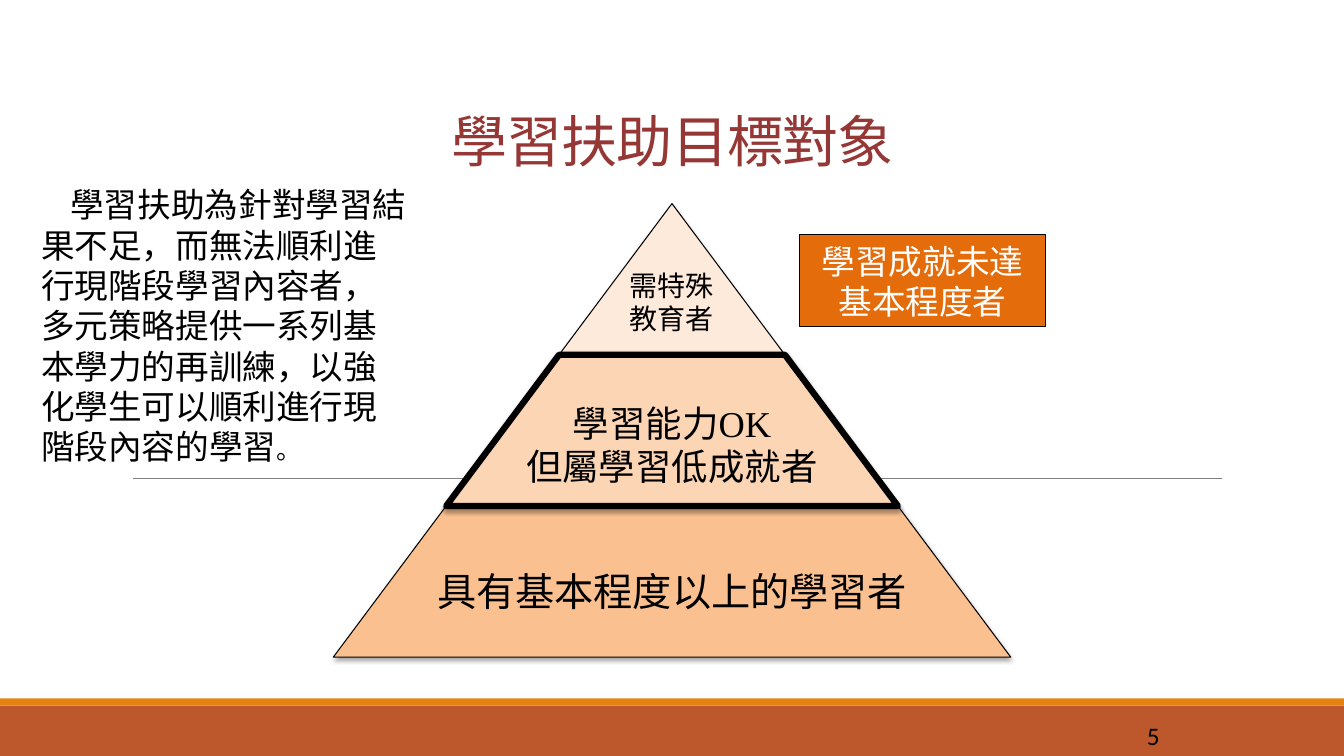
import pptx
import pptx.util
import pptx.dml.color
import pptx.enum.shapes
import pptx.enum.text
import pptx.oxml
import pptx.oxml.ns

Inches, Pt = pptx.util.Inches, pptx.util.Pt
RGB = pptx.dml.color.RGBColor
ALIGN, ANCHOR = pptx.enum.text.PP_ALIGN, pptx.enum.text.MSO_ANCHOR
RECTANGLE = pptx.enum.shapes.MSO_SHAPE.RECTANGLE

BLACK, WHITE, GREY = RGB(0, 0, 0), RGB(255, 255, 255), RGB(0x80, 0x80, 0x80)
RUST, AMBER = RGB(0xBD, 0x58, 0x2C), RGB(0xE4, 0x83, 0x12)
MAROON, ORANGE = RGB(0x95, 0x37, 0x35), RGB(0xE4, 0x6C, 0x0A)
CREAM, PEACH, APRICOT = RGB(0xFD, 0xEA, 0xDA), RGB(0xFC, 0xD5, 0xB5), RGB(0xFA, 0xC0, 0x90)
SANS, SERIF, CJK = "Arial", "Times New Roman", "Noto Sans CJK SC"

WIDTH, HEIGHT = 13.33, 7.5
DRAWING_NS = pptx.oxml.ns.nsdecls("a")

deck = pptx.Presentation()
deck.slide_width, deck.slide_height = Inches(WIDTH), Inches(HEIGHT)
slide = deck.slides.add_slide(deck.slide_layouts[5])
shapes = slide.shapes


def write(shape, lines, size, color, align=ALIGN.CENTER, anchor=ANCHOR.MIDDLE, **margins):
    """Fill a shape with lines, each a list of (text, font) runs."""
    frame = shape.text_frame
    frame_format = {"word_wrap": True, "vertical_anchor": anchor,
                    "auto_size": pptx.enum.text.MSO_AUTO_SIZE.NONE}
    frame_format.update({f"margin_{side}": Inches(gap) for side, gap in margins.items()})
    for name, value in frame_format.items():
        setattr(frame, name, value)
    for number, runs in enumerate(lines):
        paragraph = frame.add_paragraph() if number else frame.paragraphs[0]
        paragraph.alignment = align
        for words, font in runs:
            run = paragraph.add_run()
            run.text = words
            for name, value in {"name": font, "size": Pt(size), "bold": False}.items():
                setattr(run.font, name, value)
            run.font.color.rgb = color


def paint(shape, fill, line_width=0):
    """Give a shape a flat fill and, if asked, a black outline."""
    shape.shadow.inherit = False
    shape.fill.solid()
    shape.fill.fore_color.rgb = fill
    if line_width:
        shape.line.color.rgb = BLACK
        shape.line.width = Pt(line_width)
    else:
        shape.line.fill.background()


# Footer bands
for top, depth, color in [(7, 0.5, RUST), (6.93, 0.07, AMBER)]:
    band = shapes.add_shape(RECTANGLE, 0, Inches(top), Inches(WIDTH), Inches(depth))
    paint(band, color)

# Thin rule behind the pyramid
rule = shapes.add_connector(pptx.enum.shapes.MSO_CONNECTOR.STRAIGHT,
                            Inches(1.32), Inches(4.75), Inches(12.12), Inches(4.75))
rule.line.color.rgb = GREY
rule.line.width = Pt(0.5)
rule._element.spPr.append(pptx.oxml.parse_xml(f"<a:effectLst {DRAWING_NS}/>"))

# Page number
page_number = shapes.add_textbox(Inches(9.27), Inches(7.1), Inches(2.33), Inches(0.4))
write(page_number, [[("5", "Calibri")]], 18, BLACK, ALIGN.RIGHT)

# Title
heading = shapes.title
for name, value in {"left": 2.17, "top": 0.53, "width": 9, "height": 1.25}.items():
    setattr(heading, name, Inches(value))
write(heading, [[("學習扶助目標對象", SERIF)]], 40, MAROON, anchor=ANCHOR.BOTTOM)
heading_line = heading.text_frame.paragraphs[0]
heading_line.line_spacing = 0.85
heading_line.runs[0].font._element.set("spc", "-50")

# Pyramid: equal tiers widening by one step each; the outlined one goes on top
APEX_X, APEX_Y, TIER, STEP = WIDTH / 2, 2.02, 1.5, 1.12
tiers = [
    (0, CREAM, 0.75, 20, 0.45, [[("需特殊", SANS)], [("教育者", SANS)]]),
    (2, APRICOT, 0.75, 28, 0.18, [[("具有基本程度以上的學習者", SANS)]]),
    (1, PEACH, 4.5, 26, 0.28, [[("學習", SANS), ("能力OK", SERIF)], [("但屬學習低成就者", SANS)]]),
]
for level, fill, outline, size, drop, label in tiers:
    upper, lower = APEX_Y + level * TIER, APEX_Y + (level + 1) * TIER
    inner, outer = level * STEP, (level + 1) * STEP
    corners = [(APEX_X - outer, lower), (APEX_X - inner, upper),
               (APEX_X + inner, upper), (APEX_X + outer, lower)]
    if level == 0:
        corners.pop(2)
    points = [(Inches(x), Inches(y)) for x, y in corners]
    builder = shapes.build_freeform(*points[0], scale=1.0)
    builder.add_line_segments(points[1:], close=True)
    tier = builder.convert_to_shape()
    paint(tier, fill, outline)
    tier._element.spPr.find(pptx.oxml.ns.qn("a:effectLst")).append(pptx.oxml.parse_xml(
        f'<a:outerShdw {DRAWING_NS} blurRad="40000" dist="23000" dir="5400000" rotWithShape="0">'
        '<a:srgbClr val="000000"><a:alpha val="35000"/></a:srgbClr></a:outerShdw>'))
    write(tier, label, size, BLACK, left=0.04, right=0.04, top=drop, bottom=0)

# Callout
callout = shapes.add_shape(RECTANGLE, Inches(7.93), Inches(2.33), Inches(2.44), Inches(0.91))
paint(callout, ORANGE, 0.75)
write(callout, [[("學習成就未達", CJK)], [("基本程度者", CJK)]], 24, WHITE)

# Explanation with an indented first line
explanation = shapes.add_textbox(Inches(0.31), Inches(1.78), Inches(3.86), Inches(2.93))
write(explanation, [[("學習扶助為針對學習結果不足，而無法順利進行現階段學習內容者，"
                      "多元策略提供一系列基本學力的再訓練，"
                      "以強化學生可以順利進行現階段內容的學習", CJK), ("。", CJK)]],
      24, BLACK, ALIGN.LEFT, ANCHOR.TOP)
explanation_text = explanation.text_frame.paragraphs[0]
explanation_text._p.get_or_add_pPr().set("indent", str(Inches(0.29)))
explanation_text.runs[-1].font.size = Pt(18)

deck.save("out.pptx")
